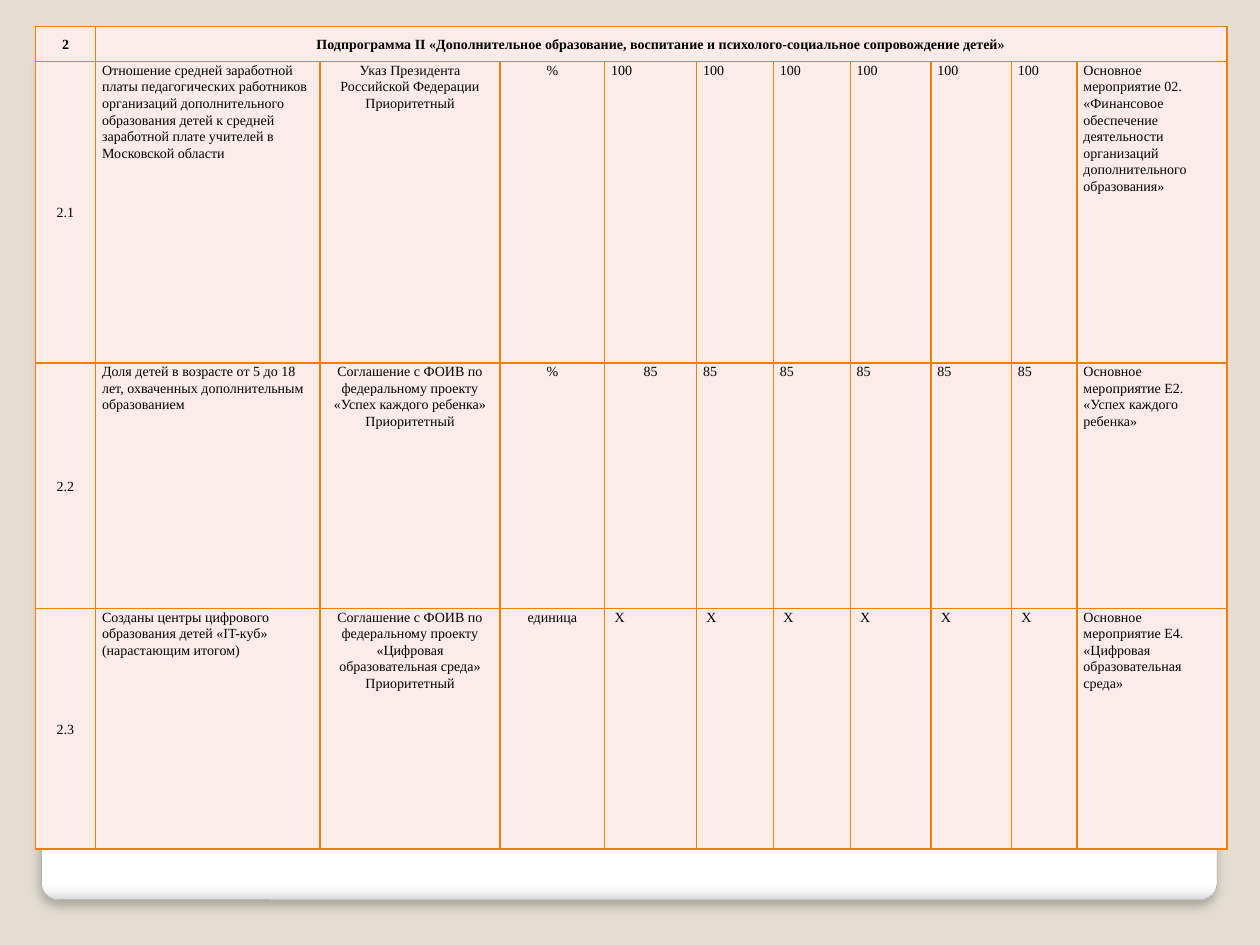
from dataclasses import dataclass

from lxml import etree
from pptx import Presentation
from pptx.dml.color import RGBColor
from pptx.enum.shapes import MSO_SHAPE
from pptx.enum.text import MSO_ANCHOR, PP_ALIGN
from pptx.oxml import parse_xml
from pptx.oxml.ns import qn
from pptx.util import Inches, Pt

ROUNDED = MSO_SHAPE.ROUNDED_RECTANGLE
TOP, MIDDLE = MSO_ANCHOR.TOP, MSO_ANCHOR.MIDDLE
LEFT, CENTER = PP_ALIGN.LEFT, PP_ALIGN.CENTER
DRAWING_NS = "http://schemas.openxmlformats.org/drawingml/2006/main"
GRID_COLUMNS, GRID_ROWS = 100, 75


@dataclass(frozen=True)
class Theme:
    background: str = "E3DED1"
    cell: str = "FCECE7"
    border: str = "F07F09"
    ink: str = "000000"
    panel_line: str = "A4A4A4"
    panel_stops: tuple = ((0, "FFFFFF"), (98, "FFFFFF"), (99, "F7F7F7"), (100, "DADADA"))
    font: str = "Times New Roman"
    text_size: float = 8
    line_spacing: float = 1.07
    border_width: float = 1
    panel_line_width: float = 0.16


def write_text(frame, text, *, theme, align=LEFT, bold=False):
    frame.word_wrap = True
    paragraph = frame.paragraphs[0]
    paragraph.alignment = align
    paragraph.line_spacing = theme.line_spacing
    run = paragraph.add_run()
    run.text = text
    run.font.name = theme.font
    run.font.size = Pt(theme.text_size)
    run.font.bold = bold
    run.font.color.rgb = RGBColor.from_string(theme.ink)


class SlideBuilder:
    def __init__(self, presentation, theme):
        self.theme = theme
        self.column = presentation.slide_width / GRID_COLUMNS
        self.row = presentation.slide_height / GRID_ROWS
        self.slide = presentation.slides.add_slide(presentation.slide_layouts[6])
        backdrop = self.slide.background.fill
        backdrop.solid()
        backdrop.fore_color.rgb = RGBColor.from_string(theme.background)

    def place(self, left, top, width, height):
        return (round(left * self.column), round(top * self.row),
                round(width * self.column), round(height * self.row))

    def panel(self, left, top, width, height):
        panel = self.slide.shapes.add_shape(ROUNDED, *self.place(left, top, width, height))
        panel.adjustments[0] = 0.02
        panel.line.color.rgb = RGBColor.from_string(self.theme.panel_line)
        panel.line.width = Pt(self.theme.panel_line_width)
        panel.fill.gradient()
        panel.fill.gradient_angle = 270
        properties = panel.fill._xPr
        stops = properties.find(".//" + qn("a:gsLst"))
        for stop in list(stops):
            stops.remove(stop)
        for position, color in self.theme.panel_stops:
            stop = etree.SubElement(stops, qn("a:gs"), pos=str(position * 1000))
            etree.SubElement(stop, qn("a:srgbClr"), val=color)
        panel.shadow.inherit = False
        properties.find(qn("a:effectLst")).append(parse_xml(
            f'<a:outerShdw xmlns:a="{DRAWING_NS}" blurRad="{Pt(6)}" dist="{Pt(4)}" '
            f'dir="5400000" rotWithShape="0"><a:srgbClr val="{self.theme.ink}">'
            '<a:alpha val="25000"/></a:srgbClr></a:outerShdw>'))

    def table(self, left, top, widths, heights):
        frame = self.slide.shapes.add_table(
            len(heights), len(widths), *self.place(left, top, sum(widths), sum(heights)))
        table = frame.table
        table.first_row = table.horz_banding = False
        for column, width in zip(table.columns, widths):
            column.width = round(width * self.column)
        for row, height in zip(table.rows, heights):
            row.height = round(height * self.row)
        for cell in table.iter_cells():
            self.style_cell(cell)
        return table

    def style_cell(self, cell):
        cell.margin_left = cell.margin_right = Inches(0.05)
        cell.margin_top = cell.margin_bottom = 0
        properties = cell._tc.get_or_add_tcPr()
        for side in ("lnL", "lnR", "lnT", "lnB"):
            properties.append(parse_xml(
                f'<a:{side} xmlns:a="{DRAWING_NS}" w="{Pt(self.theme.border_width)}">'
                f'<a:solidFill><a:srgbClr val="{self.theme.border}"/></a:solidFill></a:{side}>'))
        cell.fill.solid()
        cell.fill.fore_color.rgb = RGBColor.from_string(self.theme.cell)

    def cell_text(self, cell, text, *, anchor=TOP, **text_format):
        cell.vertical_anchor = anchor
        write_text(cell.text_frame, text, theme=self.theme, **text_format)


COLUMN_WIDTHS = [4.8, 17.8, 14.3, 8.3, 7.3, 6.1, 6.1, 6.4, 6.4, 5.2, 11.9]
ROW_HEIGHTS = [2.8, 23.9, 19.5, 19.1]
YEARS = 6
SUBPROGRAM = ("2", "Подпрограмма II «Дополнительное образование, воспитание "
              "и психолого-социальное сопровождение детей»")
INDICATORS = [
    ("2.1",
     "Отношение средней заработной платы педагогических работников организаций "
     "дополнительного образования детей к средней заработной плате учителей "
     "в Московской области",
     "Указ Президента Российской Федерации Приоритетный", "%", "100",
     "Основное мероприятие 02. «Финансовое обеспечение деятельности организаций "
     "дополнительного образования»"),
    ("2.2",
     "Доля детей в возрасте от 5 до 18 лет, охваченных дополнительным образованием",
     "Соглашение с ФОИВ по федеральному проекту «Успех каждого ребенка» Приоритетный",
     "%", "85", "Основное мероприятие Е2. «Успех каждого ребенка»"),
    ("2.3",
     "Созданы центры цифрового образования детей «IT-куб» (нарастающим итогом)",
     "Соглашение с ФОИВ по федеральному проекту «Цифровая образовательная среда» "
     "Приоритетный",
     "единица", " Х", "Основное мероприятие Е4. «Цифровая образовательная среда»"),
]
CENTERED_COLUMNS = (0, 2, 3)
CENTERED_VALUE = (2, 4)


def main():
    presentation = Presentation()
    presentation.slide_width, presentation.slide_height = Inches(10), Inches(7.5)
    builder = SlideBuilder(presentation, Theme())
    builder.panel(3.3, 3.6, 93.3, 67.8)
    indicators_table = builder.table(2.8, 2.1, COLUMN_WIDTHS, ROW_HEIGHTS)

    indicators_table.cell(0, 1).merge(indicators_table.cell(0, len(COLUMN_WIDTHS) - 1))
    for column, heading in enumerate(SUBPROGRAM):
        builder.cell_text(indicators_table.cell(0, column), heading,
                          anchor=MIDDLE, align=CENTER, bold=True)

    for row, (number, goal, basis, unit, value, measure) in enumerate(INDICATORS, 1):
        entries = [number, goal, basis, unit, *[value] * YEARS, measure]
        for column, entry in enumerate(entries):
            centered = column in CENTERED_COLUMNS or (row, column) == CENTERED_VALUE
            builder.cell_text(indicators_table.cell(row, column), entry,
                              anchor=TOP if column else MIDDLE,
                              align=CENTER if centered else LEFT)

    presentation.save("out.pptx")


if __name__ == "__main__":
    main()
